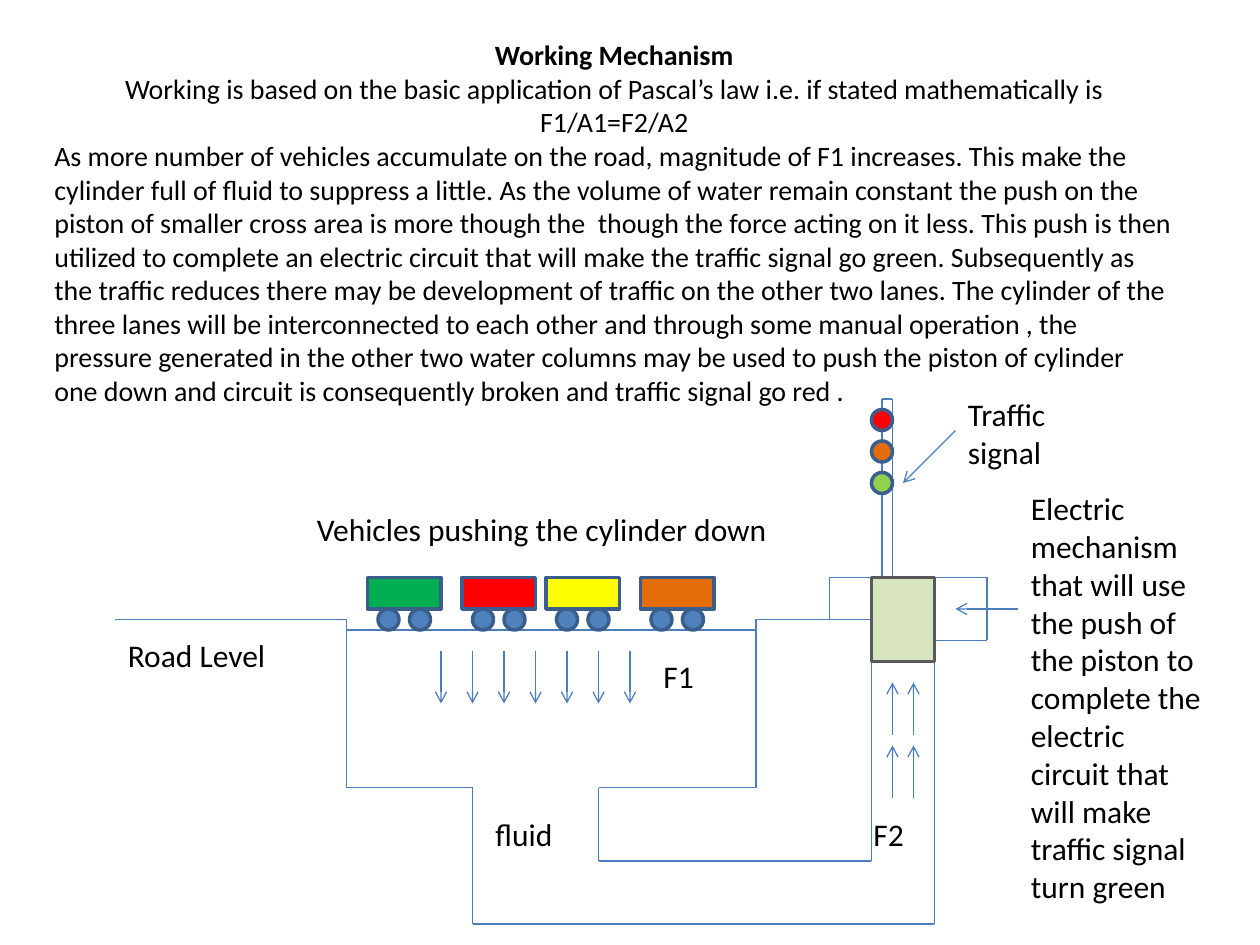
from itertools import pairwise

from lxml.etree import SubElement
from pptx import Presentation
from pptx.dml.color import RGBColor
from pptx.enum.shapes import MSO_CONNECTOR, MSO_SHAPE
from pptx.enum.text import PP_ALIGN
from pptx.oxml.ns import qn
from pptx.util import Inches, Pt

THEME = {
    "font": "Calibri", "text": "000000", "body": 16, "label": 18,
    "pipe": "4B7EBC", "thin": 0.75, "outline": "3A5F8C", "thick": 2,
    "wheel": "4F81BD", "piston": "D7E4BD", "piston_line": "595959",
    "red": "FF0000", "orange": "E46C0A", "yellow": "FFFF00",
    "green": "00B050", "lime": "92D050",
}
WIDTH, HEIGHT = 10, 7.5
COLS = 120
CELL = WIDTH / COLS

PROSE = [
    "Working Mechanism",
    "Working is based on the basic application of Pascal’s law i.e. if stated "
    "mathematically is F1/A1=F2/A2",
    "As more number of vehicles accumulate on the road, magnitude of F1 increases. "
    "This make the cylinder full of fluid to suppress a little. As the volume of water "
    "remain constant the push on the piston of smaller cross area is more though the  "
    "though the force acting on it less. This push is then utilized to complete an "
    "electric circuit that will make the traffic signal go green. Subsequently as the "
    "traffic reduces there may be development of traffic on the other two lanes. The "
    "cylinder of the three lanes will be interconnected to each other and through some "
    "manual operation , the pressure generated in the other two water columns may be "
    "used to push the piston of cylinder one down and circuit is consequently broken "
    "and traffic signal go red .",
]
PROSE_BOX = (4, 3, 109, 40)
LABELS = [
    ("Vehicles pushing the cylinder down", (29, 48, 47, 4.8)),
    ("fluid", (46, 77, 10, 4.8)),
    ("Electric mechanism that will use the push of the piston to complete the "
     "electric circuit that will make traffic signal turn green", (97, 46, 19, 41.2)),
    ("Traffic signal", (91, 37, 16, 8.5)),
    ("Road Level", (11, 60, 19, 4.8)),
    ("F1", (62, 62, 9, 4.8)),
    ("F2", (82, 77, 6, 4.8)),
]
OUTLINES = {
    "outer wall": [(11, 59), (33, 59), (33, 75), (45, 75), (45, 88), (89, 88), (89, 59)],
    "inner wall": [(83, 59), (83, 82), (57, 82), (57, 75), (72, 75), (72, 59), (83, 59)],
    "platform": [(33, 60), (72, 60)],
    "circuit": [(79, 59), (79, 55), (94, 55), (94, 61), (89, 61)],
    "piston rim": [(83, 63), (89, 63)],
    "signal post": [(84, 55), (84, 38), (85, 38), (85, 55)],
}
PISTON = (83, 55, 6, 8)
VEHICLES = [(35, "green"), (44, "red"), (52, "yellow"), (61, "orange")]
LIGHTS = ["red", "orange", "lime"]
ARROWS = (
    [((x, 62), (x, 67)) for x in range(42, 61, 3)]
    + [((x, y), (x, y - 5)) for y in (70, 76) for x in (85, 87)]
    + [((97, 58), (91, 58)), ((91, 41), (86, 46))]
)


def grid(*cells):
    return [Inches(c * CELL) for c in cells]


def color(name):
    return RGBColor.from_string(THEME[name])


def add_line(s, start, end, arrow=False):
    c = s.shapes.add_connector(MSO_CONNECTOR.STRAIGHT, *grid(*start, *end))
    c.line.color.rgb = color("pipe")
    c.line.width = Pt(THEME["thin"])
    if arrow:
        SubElement(c.line._get_or_add_ln(), qn("a:tailEnd"), type="arrow")
    SubElement(c._element.spPr, qn("a:effectLst"))
    return c


def add_solid(s, kind, box, fill, outline="outline"):
    sp = s.shapes.add_shape(kind, *grid(*box))
    sp.shadow.inherit = False
    sp.fill.solid()
    sp.fill.fore_color.rgb = color(fill)
    sp.line.color.rgb = color(outline)
    sp.line.width = Pt(THEME["thick"])
    return sp


def add_text(s, text, box, size):
    tf = s.shapes.add_textbox(*grid(*box)).text_frame
    tf.word_wrap = True
    tf.text = text
    for p in tf.paragraphs:
        for r in p.runs:
            r.font.name = THEME["font"]
            r.font.size = Pt(THEME[size])
            r.font.color.rgb = color("text")
    return tf


def main():
    prs = Presentation()
    prs.slide_width, prs.slide_height = Inches(WIDTH), Inches(HEIGHT)
    s = prs.slides.add_slide(prs.slide_layouts[6])

    walls = [(a, b, add_line(s, a, b))
             for points in OUTLINES.values() for a, b in pairwise(points)]

    for x, fill in VEHICLES:
        add_solid(s, MSO_SHAPE.RECTANGLE, (x, 55, 7, 3), fill)
        for offset in (1, 4):
            add_solid(s, MSO_SHAPE.OVAL, (x + offset, 58, 2, 2), "wheel")
    for i, fill in enumerate(LIGHTS):
        add_solid(s, MSO_SHAPE.OVAL, (83, 39 + 3 * i, 2, 2), fill)

    piston = add_solid(s, MSO_SHAPE.RECTANGLE, PISTON, "piston", "piston_line")
    x, y, w, h = PISTON
    sites = {(x, y + h / 2): 1, (x + w, y + h / 2): 3}
    for start, end, c in walls:
        if start in sites:
            c.begin_connect(piston, sites[start])
        if end in sites:
            c.end_connect(piston, sites[end])

    for start, end in ARROWS:
        add_line(s, start, end, arrow=True)
    for text, box in LABELS:
        add_text(s, text, box, "label")

    title, law, _ = add_text(s, "\n".join(PROSE), PROSE_BOX, "body").paragraphs
    title.runs[0].font.bold = True
    title.alignment = law.alignment = PP_ALIGN.CENTER

    prs.save("out.pptx")


if __name__ == "__main__":
    main()
